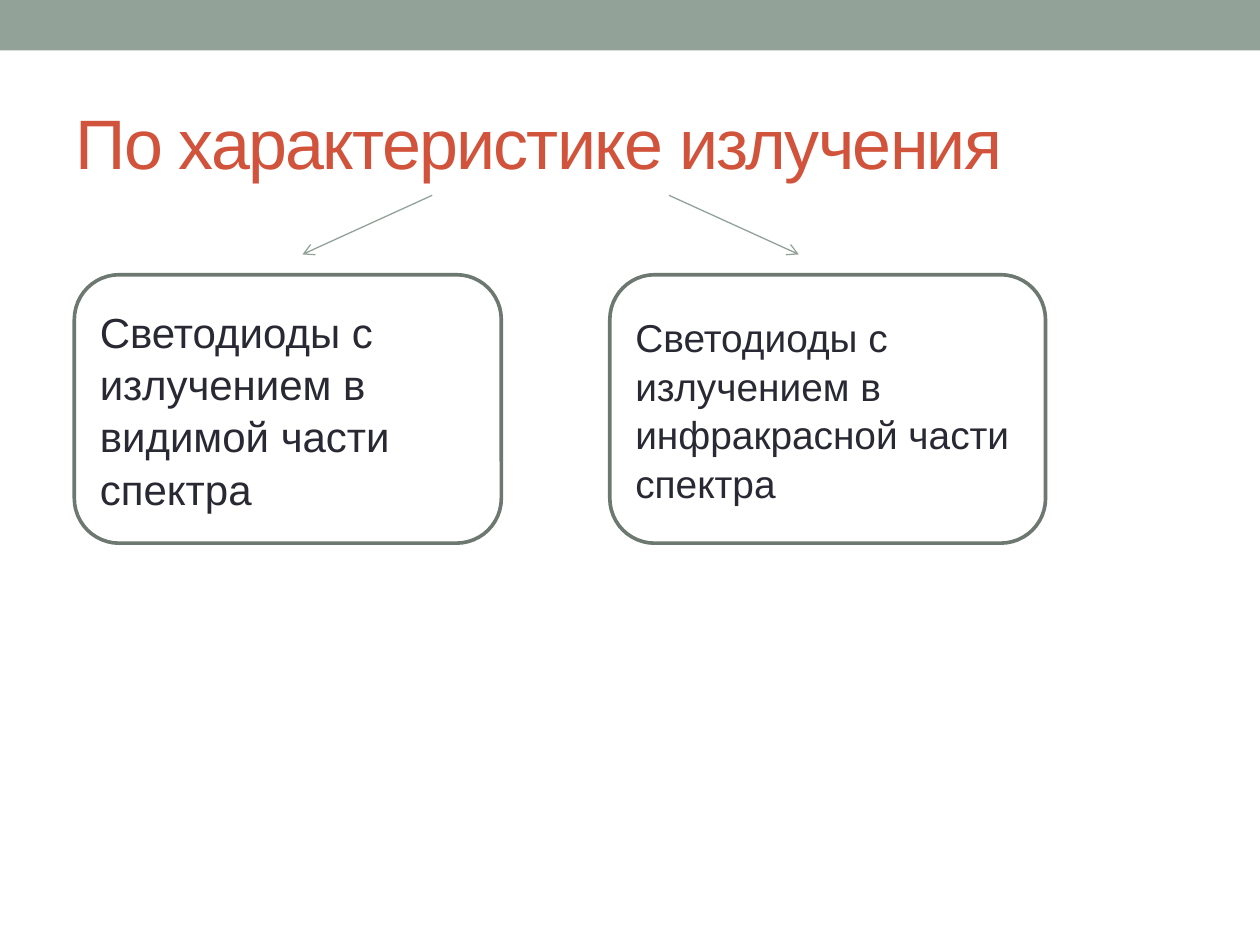
import dataclasses

import pptx
import pptx.dml.color
import pptx.enum.shapes
import pptx.enum.text
import pptx.oxml
import pptx.oxml.ns
import pptx.util

Pt = pptx.util.Pt
COLORS = {
    "band": "93A299",
    "title": "D2533C",
    "outline": "6D7871",
    "text": "292934",
    "paper": "FFFFFF",
}
FONT = "Arial"
CARD_TOP, CARD_HEIGHT = 157, 153.4
ARROW_TOP, ARROW_BOTTOM = 111.6, 145.4


@dataclasses.dataclass
class Category:
    text: str
    left: float
    width: float
    size: float
    arrow_start: float
    arrow_end: float


CATEGORIES = [
    Category("Светодиоды с излучением в видимой части спектра",
             42.5, 244, 24, 247, 172.8),
    Category("Светодиоды с излучением в инфракрасной части спектра",
             348.5, 249, 22.2, 382.3, 456.5),
]


def rgb(name: str) -> pptx.dml.color.RGBColor:
    return pptx.dml.color.RGBColor.from_string(COLORS[name])


def write_text(frame, text: str, size: float, color: str):
    frame.text = text
    frame.word_wrap = True
    frame.vertical_anchor = pptx.enum.text.MSO_ANCHOR.MIDDLE
    paragraph = frame.paragraphs[0]
    paragraph.alignment = pptx.enum.text.PP_ALIGN.LEFT
    paragraph.font.name = FONT
    paragraph.font.size = Pt(size)
    paragraph.font.color.rgb = rgb(color)
    return paragraph


def draw_band(slide) -> None:
    band = slide.shapes.add_shape(
        pptx.enum.shapes.MSO_SHAPE.RECTANGLE, 0, 0, Pt(720), Pt(28.8))
    band.shadow.inherit = False
    band.fill.solid()
    band.fill.fore_color.rgb = rgb("band")
    band.line.fill.background()


def draw_title(slide, text: str) -> None:
    title = slide.shapes.title
    title.left, title.top, title.width, title.height = map(
        Pt, (36, 41.8, 648, 77.8))
    write_text(title.text_frame, text, 40, "title")
    for properties in title.element.iter(pptx.oxml.ns.qn("a:defRPr")):
        properties.set("spc", "-100")


def draw_card(slide, category: Category) -> None:
    card = slide.shapes.add_shape(
        pptx.enum.shapes.MSO_SHAPE.ROUNDED_RECTANGLE,
        Pt(category.left), Pt(CARD_TOP), Pt(category.width), Pt(CARD_HEIGHT))
    card.shadow.inherit = False
    card.fill.solid()
    card.fill.fore_color.rgb = rgb("paper")
    card.line.color.rgb = rgb("outline")
    card.line.width = Pt(2.08)
    paragraph = write_text(card.text_frame, category.text, category.size, "text")
    paragraph.line_spacing = 1.04


def draw_arrow(slide, category: Category) -> None:
    arrow = slide.shapes.add_connector(
        pptx.enum.shapes.MSO_CONNECTOR.STRAIGHT,
        Pt(category.arrow_start), Pt(ARROW_TOP),
        Pt(category.arrow_end), Pt(ARROW_BOTTOM))
    arrow.line.color.rgb = rgb("band")
    arrow.line.width = Pt(0.75)
    namespace = pptx.oxml.ns.nsdecls("a")
    properties = arrow.element.spPr
    properties.find(pptx.oxml.ns.qn("a:ln")).append(
        pptx.oxml.parse_xml(f'<a:tailEnd {namespace} type="arrow"/>'))
    properties.append(pptx.oxml.parse_xml(f"<a:effectLst {namespace}/>"))


def main() -> None:
    presentation = pptx.Presentation()
    presentation.slide_width = Pt(720)
    presentation.slide_height = Pt(540)
    slide = presentation.slides.add_slide(presentation.slide_layouts[5])
    slide.background.fill.solid()
    slide.background.fill.fore_color.rgb = rgb("paper")
    draw_band(slide)
    draw_title(slide, "По характеристике излучения")
    for category in CATEGORIES:
        draw_card(slide, category)
    for category in CATEGORIES:
        draw_arrow(slide, category)
    presentation.save("out.pptx")


if __name__ == "__main__":
    main()
